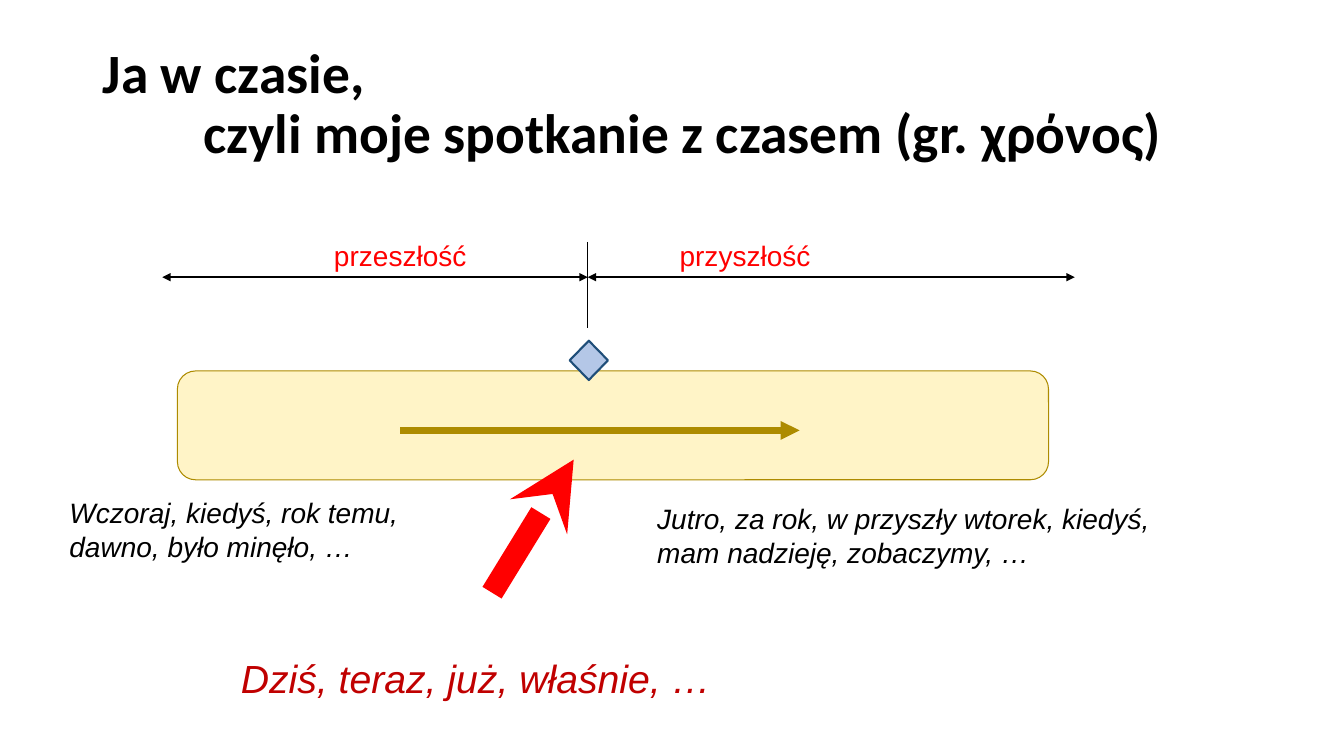
from dataclasses import dataclass, field
from typing import Any

import pptx
import pptx.dml.color
import pptx.enum.shapes
import pptx.enum.text
import pptx.oxml.ns
import pptx.util
from lxml import etree

Inches = pptx.util.Inches
Pt = pptx.util.Pt
Kind = pptx.enum.shapes.MSO_SHAPE
Align = pptx.enum.text.PP_ALIGN
Fit = pptx.enum.text.MSO_AUTO_SIZE
Anchor = pptx.enum.text.MSO_ANCHOR
qn = pptx.oxml.ns.qn

COLOURS = {
    "ink": "000000", "red": "FF0000", "wine": "C00000", "cream": "FFF4C7",
    "gold": "AD8B00", "sky": "B4C7E7", "navy": "1F4E79",
}
Box = tuple[float, float, float, float]
Point = tuple[float, float]


@dataclass
class Shape:
    kind: Any
    box: Box
    fill: str
    line: str
    width: float


@dataclass
class Arrow:
    start: Point
    end: Point
    colour: str
    width: float
    head: str = ""
    tail: str = ""


@dataclass
class Label:
    text: str
    box: Box
    colour: str
    font: dict[str, Any]
    frame: dict[str, Any] = field(default_factory=dict)
    para: dict[str, Any] = field(default_factory=dict)


def rgb(name: str) -> pptx.dml.color.RGBColor:
    return pptx.dml.color.RGBColor.from_string(COLOURS[name])


def apply(target: Any, values: dict[str, Any]) -> None:
    for name, value in values.items():
        setattr(target, name, value)


def draw_shape(slide: Any, item: Shape) -> None:
    shape = slide.shapes.add_shape(item.kind, *map(Inches, item.box))
    shape.shadow.inherit = False
    shape.fill.solid()
    shape.fill.fore_color.rgb = rgb(item.fill)
    shape.line.color.rgb = rgb(item.line)
    shape.line.width = Pt(item.width)


def draw_arrow(slide: Any, item: Arrow) -> None:
    line = slide.shapes.add_connector(
        pptx.enum.shapes.MSO_CONNECTOR.STRAIGHT,
        *map(Inches, item.start + item.end))
    line.line.color.rgb = rgb(item.colour)
    line.line.width = Pt(item.width)
    props = line.line._get_or_add_ln()
    for tag, end in (("a:headEnd", item.head), ("a:tailEnd", item.tail)):
        if end:
            etree.SubElement(props, qn(tag), type=end)
    etree.SubElement(line._element.spPr, qn("a:effectLst"))


def draw_label(slide: Any, item: Label) -> None:
    frame = slide.shapes.add_textbox(*map(Inches, item.box)).text_frame
    apply(frame, {"word_wrap": True, "auto_size": Fit.SHAPE_TO_FIT_TEXT} | item.frame)
    para = frame.paragraphs[0]
    para.text = item.text
    apply(para, item.para)
    for run in para.runs:
        apply(run.font, item.font)
        run.font.color.rgb = rgb(item.colour)


# Time axis: past and future meet at the present
NOW, AXIS = 5.83, 2.75
BOTH = {"head": "triangle", "tail": "triangle"}
SHAPES = [
    Shape(Kind.ROUNDED_RECTANGLE, (1.76, 3.68, 8.64, 1.08), "cream", "gold", 0.75),
    Shape(Kind.DIAMOND, (5.65, 3.38, 0.38, 0.39), "sky", "navy", 1.5),
]
ARROWS = [
    Arrow((3.97, 4.27), (7.93, 4.27), "gold", 4.5, tail="triangle"),
    Arrow((1.61, AXIS), (NOW, AXIS), "ink", 1.5, **BOTH),
    Arrow((NOW, AXIS), (10.66, AXIS), "ink", 1.5, **BOTH),
    Arrow((NOW, 2.4), (NOW, 3.25), "ink", 0.5),
    Arrow((4.88, 5.88), (5.69, 4.56), "red", 16, tail="stealth"),
]

# Text formats
TITLE = {"name": "Calibri", "size": Pt(39.6), "bold": True}
PLAIN = {"name": "Arial", "size": Pt(20)}
SLANT = PLAIN | {"italic": True}
LARGE = SLANT | {"size": Pt(28)}
MIDDLE = {"vertical_anchor": Anchor.MIDDLE}
TIGHT = MIDDLE | {f"margin_{side}": Inches(0.03)
                  for side in ("left", "top", "right", "bottom")}
CENTRE = {"alignment": Align.CENTER}

LABELS = [
    Label("Ja w czasie, \v\t\tczyli moje spotkanie z czasem (gr. χρόνος)",
          (0.92, 0.4, 11.5, 1.29), "ink", TITLE,
          MIDDLE | {"auto_size": Fit.NONE}, {"line_spacing": 0.9}),
    Label("przeszłość", (3.25, 2.33, 1.44, 0.4), "red", PLAIN, TIGHT, CENTRE),
    Label("przyszłość", (6.67, 2.33, 1.44, 0.4), "red", PLAIN, TIGHT, CENTRE),
    Label("Dziś, teraz, już, właśnie, …", (2.29, 6.44, 7.32, 0.57), "wine", LARGE),
    Label("Wczoraj, kiedyś, rok temu, dawno, było minęło, …",
          (0.59, 4.87, 3.93, 0.77), "ink", SLANT),
    Label("Jutro, za rok, w przyszły wtorek, kiedyś, mam nadzieję, zobaczymy, …",
          (6.42, 4.93, 5.66, 0.77), "ink", SLANT),
]


def main() -> None:
    deck = pptx.Presentation()
    apply(deck, {"slide_width": Inches(13.33), "slide_height": Inches(7.5)})
    slide = deck.slides.add_slide(deck.slide_layouts[6])
    for draw, items in ((draw_shape, SHAPES), (draw_arrow, ARROWS),
                        (draw_label, LABELS)):
        for item in items:
            draw(slide, item)
    deck.save("out.pptx")


if __name__ == "__main__":
    main()
